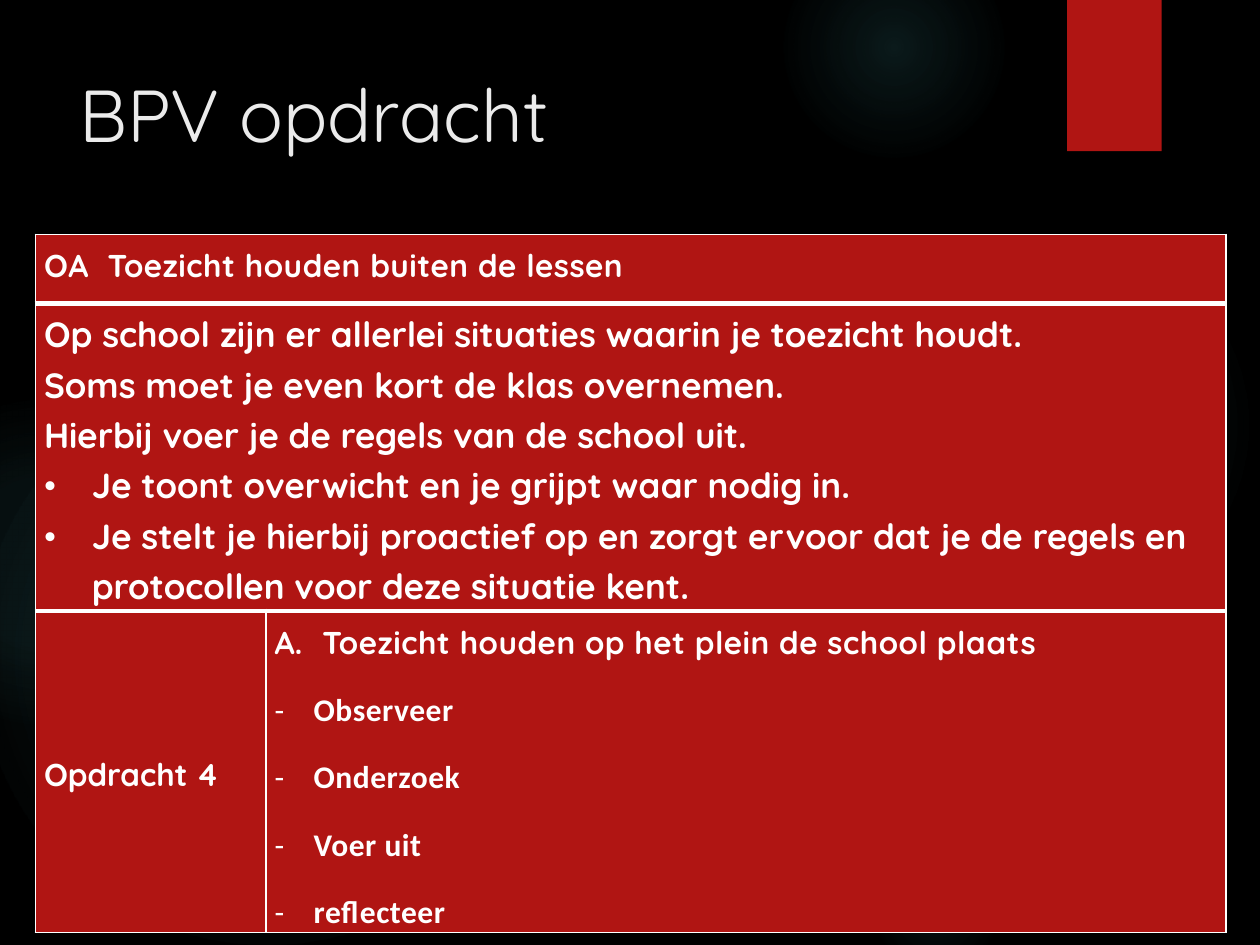
import dataclasses

import lxml.etree
import pptx
import pptx.dml.color
import pptx.enum.shapes
import pptx.enum.text
import pptx.oxml
import pptx.oxml.ns
import pptx.util

Inches = pptx.util.Inches
Pt = pptx.util.Pt
MIDDLE = pptx.enum.text.MSO_ANCHOR.MIDDLE
TOP = pptx.enum.text.MSO_ANCHOR.TOP
qn = pptx.oxml.ns.qn
NAMESPACE = pptx.oxml.ns.nsdecls("a")


@dataclasses.dataclass(frozen=True)
class Theme:
    background: str = "000000"
    glow: str = "50B9C1"
    accent: str = "B01513"
    title: str = "EBEBEB"
    white: str = "FFFFFF"
    heading_font: str = "Quicksand"
    list_font: str = "Calibri"
    title_size: int = 42
    intro_size: int = 20
    body_size: int = 18
    thin_line: int = 1
    thick_line: int = 3


@dataclasses.dataclass
class Line:
    text: str
    size: int
    font: str
    line_spacing: float = 1.15
    letter_spacing: float = 0
    space_after: int = 0
    indent: float = 0
    bullet: str = ""


def rgb(color):
    return pptx.dml.color.RGBColor.from_string(color)


class SlideBuilder:
    def __init__(self, slide, theme):
        self.slide = slide
        self.theme = theme
        slide.background.fill.solid()
        slide.background.fill.fore_color.rgb = rgb(theme.background)

    def shape(self, kind, left, top, width, height):
        shape = self.slide.shapes.add_shape(
            kind, Inches(left), Inches(top), Inches(width), Inches(height))
        shape.shadow.inherit = False
        shape.line.fill.background()
        return shape

    def glow(self, left, top, diameter, inner, middle, edge):
        shape = self.shape(pptx.enum.shapes.MSO_SHAPE.OVAL, left, top, diameter, diameter)
        shape.fill.gradient()
        stops = "".join(
            f'<a:gs pos="{position * 1000}"><a:srgbClr val="{self.theme.glow}">'
            f'<a:alpha val="{alpha * 1000}"/></a:srgbClr></a:gs>'
            for position, alpha in ((0, inner), (36, middle), (edge, 0)))
        gradient = pptx.oxml.parse_xml(
            f'<a:gradFill {NAMESPACE}><a:gsLst>{stops}</a:gsLst><a:path path="circle">'
            '<a:fillToRect l="50000" t="50000" r="50000" b="50000"/></a:path></a:gradFill>')
        properties = shape._element.spPr
        properties.replace(properties.find(qn("a:gradFill")), gradient)

    def ribbon(self, left, top, width, height):
        shape = self.shape(pptx.enum.shapes.MSO_SHAPE.RECTANGLE, left, top, width, height)
        shape.fill.solid()
        shape.fill.fore_color.rgb = rgb(self.theme.accent)

    def style_font(self, font, name, size, color, bold):
        font.name = name
        font.size = Pt(size)
        font.color.rgb = rgb(color)
        font.bold = bold

    def title(self, text, left, top, width, height):
        box = self.slide.shapes.add_textbox(
            Inches(left), Inches(top), Inches(width), Inches(height))
        box.text_frame.word_wrap = True
        paragraph = box.text_frame.paragraphs[0]
        paragraph.text = text
        self.style_font(paragraph.font, self.theme.heading_font,
                        self.theme.title_size, self.theme.title, False)

    def table(self, left, top, columns, rows):
        frame = self.slide.shapes.add_table(
            len(rows), len(columns), Inches(left), Inches(top),
            Inches(sum(columns)), Inches(sum(rows)))
        table = frame.table
        table.first_row = False
        table.horz_banding = False
        for column, width in zip(table.columns, columns):
            column.width = Inches(width)
        for row, height in zip(table.rows, rows):
            row.height = Inches(height)
        return table

    def cell(self, cell, lines, anchor=MIDDLE):
        cell.margin_left = cell.margin_right = Inches(0.07)
        cell.margin_top = cell.margin_bottom = 0
        cell.vertical_anchor = anchor
        for index, line in enumerate(lines):
            frame = cell.text_frame
            paragraph = frame.add_paragraph() if index else frame.paragraphs[0]
            self.line(paragraph, line)

    def line(self, paragraph, line):
        paragraph.text = line.text
        paragraph.line_spacing = line.line_spacing
        paragraph.space_after = Pt(line.space_after)
        properties = paragraph._p.get_or_add_pPr()
        if line.bullet:
            properties.set("marL", str(Inches(line.indent)))
            properties.set("indent", str(-Inches(line.indent)))
            bullet_font = lxml.etree.SubElement(properties, qn("a:buFont"))
            bullet_font.set("typeface", line.font)
            if line.bullet == "A.":
                bullet = lxml.etree.SubElement(properties, qn("a:buAutoNum"))
                bullet.set("type", "alphaUcPeriod")
            else:
                bullet = lxml.etree.SubElement(properties, qn("a:buChar"))
                bullet.set("char", line.bullet)
        self.style_font(paragraph.font, line.font, line.size, self.theme.white, True)
        spacing = str(round(line.letter_spacing * 100))
        properties.find(qn("a:defRPr")).set("spc", spacing)

    def cell_style(self, cell, top, bottom):
        cell.fill.solid()
        cell.fill.fore_color.rgb = rgb(self.theme.accent)
        thin = self.theme.thin_line
        properties = cell._tc.get_or_add_tcPr()
        widths = {"L": thin, "R": thin, "T": top, "B": bottom}
        for position, (side, width) in enumerate(widths.items()):
            border = pptx.oxml.parse_xml(
                f'<a:ln{side} {NAMESPACE} w="{Pt(width)}"><a:solidFill>'
                f'<a:srgbClr val="{self.theme.white}"/></a:solidFill></a:ln{side}>')
            properties.insert(position, border)


def main():
    theme = Theme()
    presentation = pptx.Presentation()
    presentation.slide_width = Inches(10)
    presentation.slide_height = Inches(7.5)
    builder = SlideBuilder(presentation.slides.add_slide(presentation.slide_layouts[6]), theme)

    for glow in (
        (6.89, 1.83, 3.08, 7, 6, 69),
        (6.22, -0.5, 1.75, 14, 7, 73),
        (6.89, 6.67, 1.08, 9, 5, 66),
        (-0.17, 2.92, 4.58, 11, 10, 75),
        (-0.92, 3.17, 2.58, 8, 8, 72),
    ):
        builder.glow(*glow)
    builder.ribbon(8.47, 0, 0.75, 1.2)
    builder.title("BPV opdracht", 0.53, 0.5, 7.72, 1.53)

    table = builder.table(0.28, 1.86, (1.83, 7.62), (0.55, 2.44, 2.55))
    thin, thick = theme.thin_line, theme.thick_line
    for row, (top, bottom) in enumerate(((thin, thick), (thick, thick), (thick, thin))):
        for column in range(2):
            builder.cell_style(table.cell(row, column), top, bottom)
    for row in range(2):
        table.cell(row, 0).merge(table.cell(row, 1))

    heading = theme.heading_font
    builder.cell(table.cell(0, 0), [
        Line("OA  Toezicht houden buiten de lessen", theme.body_size, heading, 1.3, 0.3)], TOP)
    intro = [Line(text, theme.intro_size, heading) for text in (
        "Op school zijn er allerlei situaties waarin je toezicht houdt.",
        "Soms moet je even kort de klas overnemen.",
        "Hierbij voer je de regels van de school uit.")]
    duties = [Line(text, theme.intro_size, heading, indent=0.38, bullet="•") for text in (
        "Je toont overwicht en je grijpt waar nodig in.",
        "Je stelt je hierbij proactief op en zorgt ervoor dat je de regels en "
        "protocollen voor deze situatie kent.")]
    builder.cell(table.cell(1, 0), intro + duties)
    builder.cell(table.cell(2, 0), [Line("Opdracht 4", theme.body_size, heading)])
    task = Line("Toezicht houden op het plein de school plaats",
                theme.body_size, heading, 1.3, 0.3, 10, 0.38, "A.")
    steps = [Line(text, theme.body_size, theme.list_font, 1.3, 0.3, 10, 0.31, "-")
             for text in ("Observeer", "Onderzoek", "Voer uit", "reflecteer")]
    builder.cell(table.cell(2, 1), [task] + steps)

    presentation.save("out.pptx")


if __name__ == "__main__":
    main()
